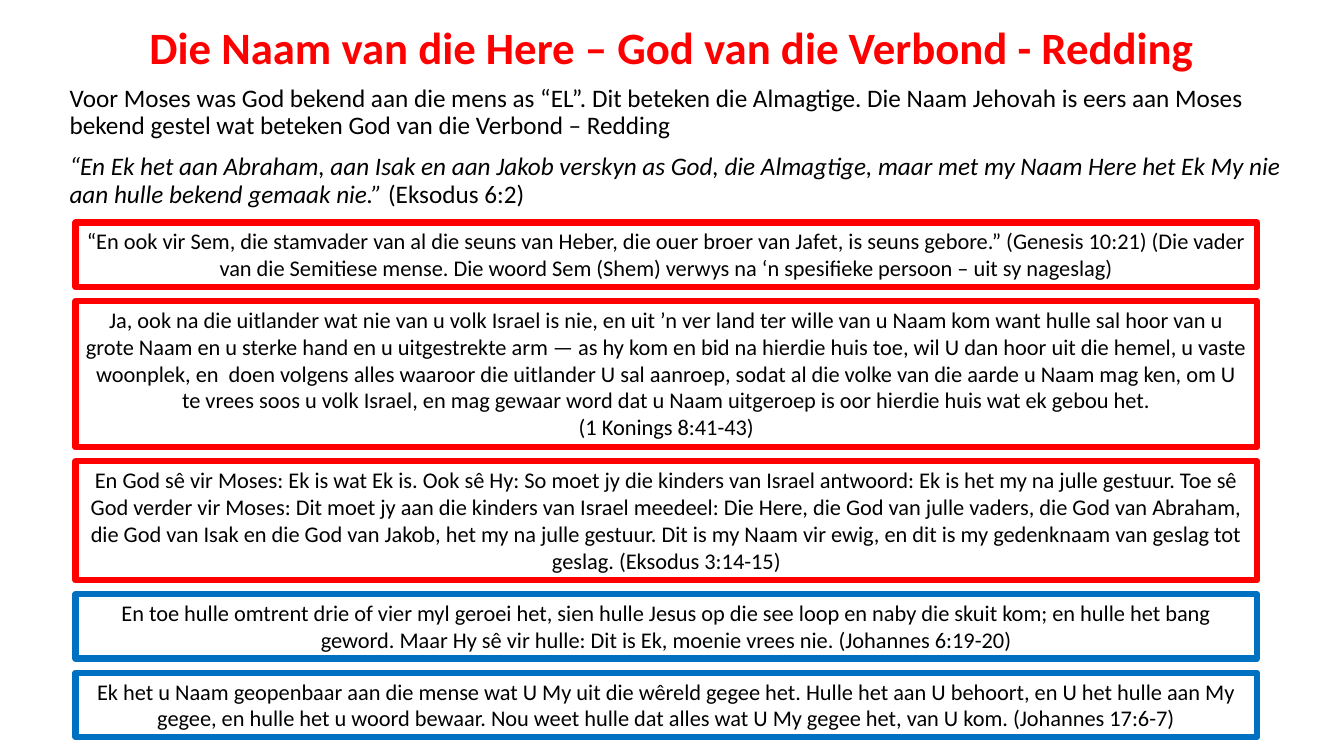
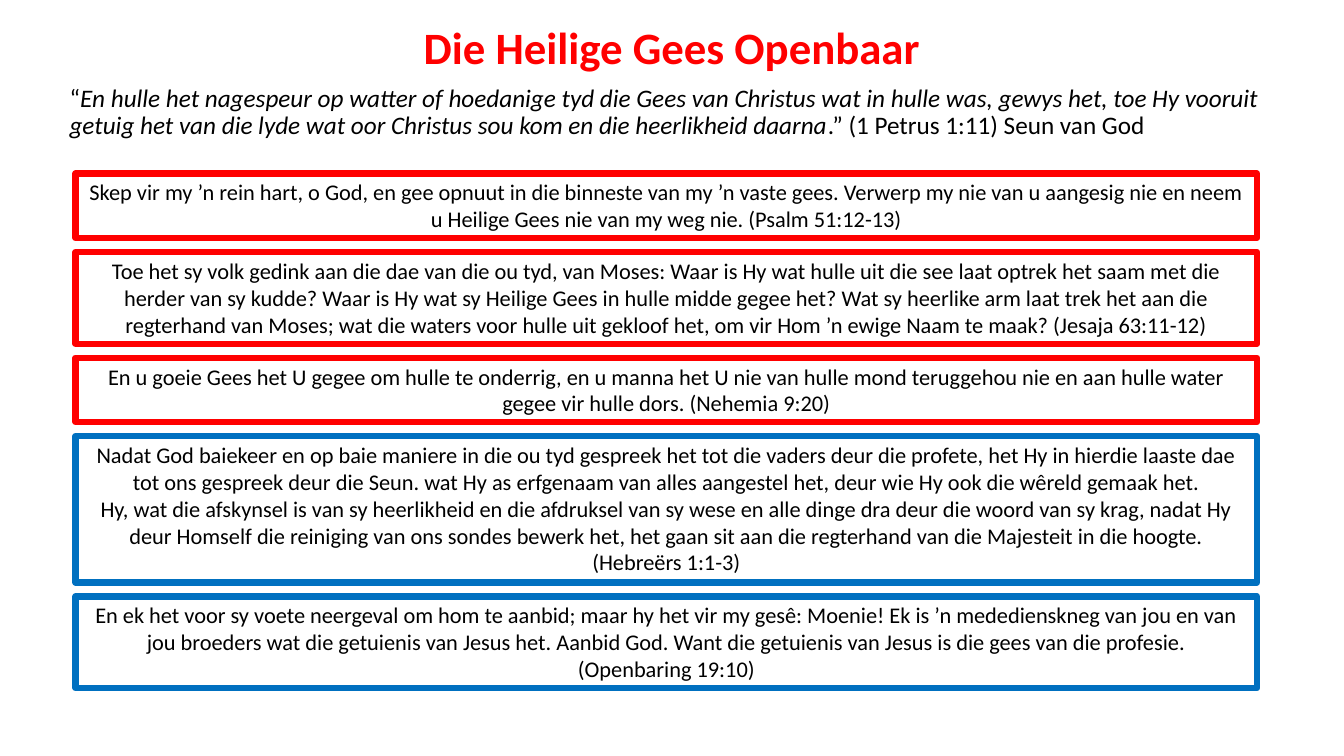
from lxml.etree import SubElement
from pptx import Presentation
from pptx.dml.color import RGBColor
from pptx.enum.shapes import MSO_SHAPE
from pptx.enum.text import MSO_ANCHOR as Anchor, MSO_AUTO_SIZE as AutoSize, PP_ALIGN as Align
from pptx.oxml.ns import qn
from pptx.util import Pt

RED, BLUE, BLACK = "FF0000", "0070C0", "000000"
SLIDE_WIDTH, SLIDE_HEIGHT = 960, 540
BOX_LEFT, BOX_WIDTH, BOX_GAP = 54, 844, 10
LINE_HEIGHT, BOX_PADDING = 19.5, 7
TITLE_FONT = {"name": "Calibri", "size": Pt(32), "bold": True}
INTRO_FONT = {"name": "Calibri", "size": Pt(18)}
VERSE_FONT = {"name": "Calibri", "size": Pt(16)}
TITLE_PARAGRAPH = {"alignment": Align.CENTER, "line_spacing": 0.9}
INTRO_PARAGRAPH = {"alignment": Align.LEFT, "line_spacing": 0.9, "space_before": Pt(10)}
VERSE_PARAGRAPH = {"alignment": Align.CENTER}

SLIDES = [
    {
        "title": "Die Naam van die Here – God van die Verbond - Redding",
        "intro": [
            [("Voor Moses was God bekend aan die mens as “EL”. Dit beteken die Almagtige. "
              "Die Naam Jehovah is eers aan Moses bekend gestel wat beteken God van die "
              "Verbond – Redding", False)],
            [("“En Ek het aan Abraham, aan Isak en aan Jakob verskyn as God, die Almagtige, "
              "maar met my Naam Here het Ek My nie aan hulle bekend gemaak nie.”", True),
             (" (Eksodus 6:2)", False)],
        ],
        "intro_height": 109,
        "boxes_top": 159,
        "boxes": [
            (RED, 2, "“En ook vir Sem, die stamvader van al die seuns van Heber, die ouer broer "
             "van Jafet, is seuns gebore.” (Genesis 10:21) (Die vader van die Semitiese mense. "
             "Die woord Sem (Shem) verwys na ‘n spesifieke persoon – uit sy nageslag)"),
            (RED, 5, "Ja, ook na die uitlander wat nie van u volk Israel is nie, en uit ’n ver "
             "land ter wille van u Naam kom want hulle sal hoor van u grote Naam en u sterke "
             "hand en u uitgestrekte arm — as hy kom en bid na hierdie huis toe, wil U dan hoor "
             "uit die hemel, u vaste woonplek, en  doen volgens alles waaroor die uitlander U "
             "sal aanroep, sodat al die volke van die aarde u Naam mag ken, om U te vrees soos "
             "u volk Israel, en mag gewaar word dat u Naam uitgeroep is oor hierdie huis wat ek "
             "gebou het.\n(1 Konings 8:41-43)"),
            (RED, 4, "En God sê vir Moses: Ek is wat Ek is. Ook sê Hy: So moet jy die kinders "
             "van Israel antwoord: Ek is het my na julle gestuur. Toe sê God verder vir Moses: "
             "Dit moet jy aan die kinders van Israel meedeel: Die Here, die God van julle "
             "vaders, die God van Abraham, die God van Isak en die God van Jakob, het my na "
             "julle gestuur. Dit is my Naam vir ewig, en dit is my gedenknaam van geslag tot "
             "geslag. (Eksodus 3:14-15)"),
            (BLUE, 2, "En toe hulle omtrent drie of vier myl geroei het, sien hulle Jesus op "
             "die see loop en naby die skuit kom; en hulle het bang geword. Maar Hy sê vir "
             "hulle: Dit is Ek, moenie vrees nie. (Johannes 6:19-20)"),
            (BLUE, 2, "Ek het u Naam geopenbaar aan die mense wat U My uit die wêreld gegee "
             "het. Hulle het aan U behoort, en U het hulle aan My gegee, en hulle het u woord "
             "bewaar. Nou weet hulle dat alles wat U My gegee het, van U kom. (Johannes 17:6-7)"),
        ],
    },
    {
        "title": "Die Heilige Gees Openbaar",
        "intro": [
            [("“", False),
             ("En hulle het nagespeur op watter of hoedanige tyd die Gees van Christus wat in "
              "hulle was, gewys het, toe Hy vooruit getuig het van die lyde wat oor Christus "
              "sou kom en die heerlikheid daarna", True),
             (".” (1 Petrus 1:11) Seun van God", False)],
        ],
        "intro_height": 66,
        "boxes_top": 124,
        "boxes": [
            (RED, 2, "Skep vir my ’n rein hart, o God, en gee opnuut in die binneste van my ’n "
             "vaste gees. Verwerp my nie van u aangesig nie en neem u Heilige Gees nie van my "
             "weg nie. (Psalm 51:12-13)"),
            (RED, 3, "Toe het sy volk gedink aan die dae van die ou tyd, van Moses: Waar is Hy "
             "wat hulle uit die see laat optrek het saam met die herder van sy kudde? Waar is "
             "Hy wat sy Heilige Gees in hulle midde gegee het? Wat sy heerlike arm laat trek "
             "het aan die regterhand van Moses; wat die waters voor hulle uit gekloof het, om "
             "vir Hom ’n ewige Naam te maak? (Jesaja 63:11-12)"),
            (RED, 2, "En u goeie Gees het U gegee om hulle te onderrig, en u manna het U nie "
             "van hulle mond teruggehou nie en aan hulle water gegee vir hulle dors. "
             "(Nehemia 9:20)"),
            (BLUE, 5, "Nadat God baiekeer en op baie maniere in die ou tyd gespreek het tot die "
             "vaders deur die profete, het Hy in hierdie laaste dae tot ons gespreek deur die "
             "Seun. wat Hy as erfgenaam van alles aangestel het, deur wie Hy ook die wêreld "
             "gemaak het.\nHy, wat die afskynsel is van sy heerlikheid en die afdruksel van sy "
             "wese en alle dinge dra deur die woord van sy krag, nadat Hy deur Homself die "
             "reiniging van ons sondes bewerk het, het gaan sit aan die regterhand van die "
             "Majesteit in die hoogte. (Hebreërs 1:1-3)"),
            (BLUE, 3, "En ek het voor sy voete neergeval om hom te aanbid; maar hy het vir my "
             "gesê: Moenie! Ek is ’n mededienskneg van jou en van jou broeders wat die "
             "getuienis van Jesus het. Aanbid God. Want die getuienis van Jesus is die gees van "
             "die profesie.\n(Openbaring 19:10)"),
        ],
    },
]


def set_color(color_format, hex_color):
    """Apply a hex colour to a font colour or a solid fill colour."""
    color_format.rgb = RGBColor.from_string(hex_color)


def apply_format(target, values):
    """Set each named attribute on the target."""
    for name, value in values.items():
        setattr(target, name, value)


def place(shape, left, top, width, height):
    """Move and size a shape, in points."""
    apply_format(shape, {"left": Pt(left), "top": Pt(top),
                         "width": Pt(width), "height": Pt(height)})


def write_text(shape, paragraphs, paragraph_format, font_format, color, anchor):
    """Fill a shape with paragraphs, each a list of (text, italic) runs."""
    frame = shape.text_frame
    apply_format(frame, {"word_wrap": True, "auto_size": AutoSize.NONE,
                         "vertical_anchor": anchor})
    for index, runs in enumerate(paragraphs):
        paragraph = frame.add_paragraph() if index else frame.paragraphs[0]
        apply_format(paragraph, paragraph_format)
        for text, italic in runs:
            run = paragraph.add_run()
            run.text = text
            apply_format(run.font, {**font_format, "italic": italic})
            set_color(run.font.color, color)


def remove_bullets(shape):
    """Take the inherited bullet and indent off every paragraph."""
    for paragraph in shape.text_frame.paragraphs:
        properties = paragraph._p.get_or_add_pPr()
        properties.set("marL", "0")
        properties.set("indent", "0")
        SubElement(properties, qn("a:buNone"))


def add_title(slide, text):
    """Format the title placeholder across the full slide width."""
    place(slide.shapes.title, 0, 14.4, SLIDE_WIDTH, 43.2)
    write_text(slide.shapes.title, [[(text, False)]], TITLE_PARAGRAPH, TITLE_FONT, RED,
               Anchor.MIDDLE)


def add_intro(slide, paragraphs, height):
    """Format the body placeholder as plain introductory text."""
    body = slide.placeholders[1]
    place(body, 42.5, 57.6, 893, height)
    write_text(body, paragraphs, INTRO_PARAGRAPH, INTRO_FONT, BLACK, Anchor.TOP)
    remove_bullets(body)


def add_verse_box(slide, top, height, color, text):
    """Draw an outlined box holding a centred verse."""
    box = slide.shapes.add_shape(MSO_SHAPE.RECTANGLE, Pt(BOX_LEFT), Pt(top),
                                 Pt(BOX_WIDTH), Pt(height))
    box.shadow.inherit = False
    box.fill.background()
    box.line.width = Pt(4.5)
    set_color(box.line.color, color)
    paragraphs = [[(part, False)] for part in text.split("\n")]
    write_text(box, paragraphs, VERSE_PARAGRAPH, VERSE_FONT, BLACK, Anchor.TOP)


def add_verse_boxes(slide, top, boxes):
    """Stack verse boxes with equal gaps, sized by their line counts."""
    for color, line_count, text in boxes:
        height = line_count * LINE_HEIGHT + BOX_PADDING
        add_verse_box(slide, top, height, color, text)
        top += height + BOX_GAP


def main():
    """Build and save the presentation."""
    presentation = Presentation()
    apply_format(presentation, {"slide_width": Pt(SLIDE_WIDTH), "slide_height": Pt(SLIDE_HEIGHT)})
    for content in SLIDES:
        slide = presentation.slides.add_slide(presentation.slide_layouts[1])
        add_title(slide, content["title"])
        add_intro(slide, content["intro"], content["intro_height"])
        add_verse_boxes(slide, content["boxes_top"], content["boxes"])
    presentation.save("out.pptx")


if __name__ == "__main__":
    main()
